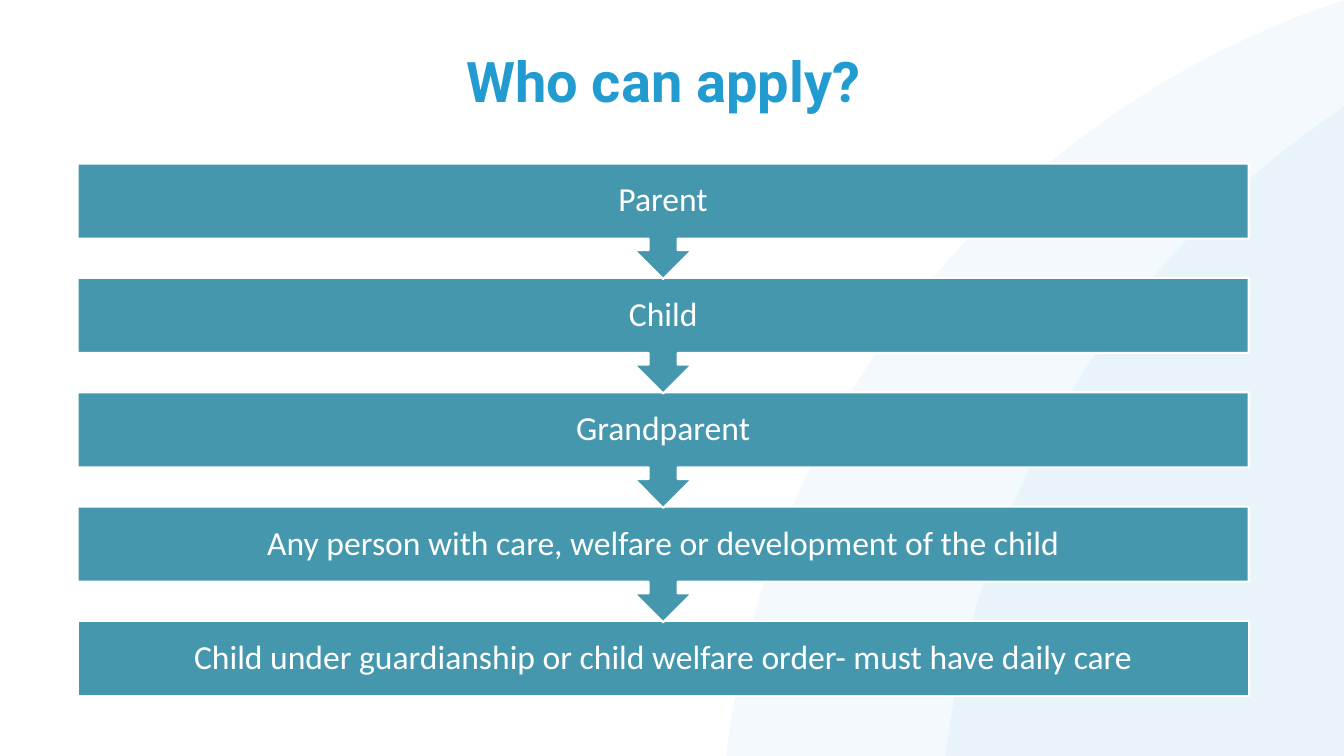
"""Build the "Who can apply?" slide: a chain of applicants on a pale background."""
from lxml.etree import SubElement
from pptx import Presentation
from pptx.dml.color import RGBColor
from pptx.enum.shapes import MSO_SHAPE as Shape
from pptx.enum.text import MSO_ANCHOR as Anchor, PP_ALIGN as Align
from pptx.oxml.ns import qn
from pptx.util import Pt

TITLE = "Who can apply?"
APPLICANTS = [
    "Parent",
    "Child",
    "Grandparent",
    "Any person with care, welfare or development of the child",
    "Child under guardianship or child welfare order- must have daily care",
]

BLUE = RGBColor(0x22, 0x9C, 0xD0)
TEAL = RGBColor(0x45, 0x97, 0xAD)
WHITE = RGBColor(0xFF, 0xFF, 0xFF)

LEFT, WIDTH = 55.4, 836.6
TITLE_TOP, TITLE_HEIGHT = 35.3, 69.8
CHAIN_TOP, PITCH = 116.8, 81.7
STEP_HEIGHT, LAST_HEIGHT = 82.6, 53.3
INSET = 13.5
CIRCLE_LEFTS = [514.1, 671]
CIRCLE_TOP, CIRCLE_SIZE = -32.4, 1297.4
CIRCLE_ALPHA = 5


def write(frame, text, font, size, color, bold=False):
    frame.word_wrap = True
    line = frame.paragraphs[0]
    line.alignment = Align.CENTER
    line.line_spacing = 0.9
    run = line.add_run()
    run.text = text
    run.font.name = font
    run.font.size = Pt(size)
    run.font.bold = bold
    run.font.color.rgb = color


def add_filled(slide, kind, left, top, width, height, color):
    part = slide.shapes.add_shape(kind, Pt(left), Pt(top), Pt(width), Pt(height))
    part.shadow.inherit = False
    part.fill.solid()
    part.fill.fore_color.rgb = color
    return part


def add_circle(slide, left):
    circle = add_filled(slide, Shape.OVAL, left, CIRCLE_TOP, CIRCLE_SIZE, CIRCLE_SIZE, BLUE)
    circle.line.fill.background()
    tint = circle._element.spPr.find(qn("a:solidFill")).find(qn("a:srgbClr"))
    SubElement(tint, qn("a:alpha")).set("val", str(CIRCLE_ALPHA * 1000))


def add_title(slide):
    title = slide.shapes.add_textbox(Pt(LEFT), Pt(TITLE_TOP), Pt(WIDTH), Pt(TITLE_HEIGHT))
    write(title.text_frame, TITLE, "Roboto", 40, BLUE, bold=True)


def add_applicant(slide, index, text):
    is_last = index == len(APPLICANTS) - 1
    kind = Shape.RECTANGLE if is_last else Shape.DOWN_ARROW_CALLOUT
    height = LAST_HEIGHT if is_last else STEP_HEIGHT
    step = add_filled(slide, kind, LEFT, CHAIN_TOP + index * PITCH, WIDTH, height, TEAL)
    step.line.color.rgb = WHITE
    step.line.width = Pt(1.5)
    frame = step.text_frame
    frame.vertical_anchor = Anchor.MIDDLE
    frame.margin_left = frame.margin_right = Pt(INSET)
    frame.margin_top = frame.margin_bottom = Pt(INSET)
    write(frame, text, "Calibri", 24, WHITE)


def main():
    deck = Presentation()
    deck.slide_width, deck.slide_height = Pt(960), Pt(540)
    slide = deck.slides.add_slide(deck.slide_layouts[6])
    for left in CIRCLE_LEFTS:
        add_circle(slide, left)
    add_title(slide)
    for index, text in reversed(list(enumerate(APPLICANTS))):
        add_applicant(slide, index, text)
    deck.save("out.pptx")


if __name__ == "__main__":
    main()
